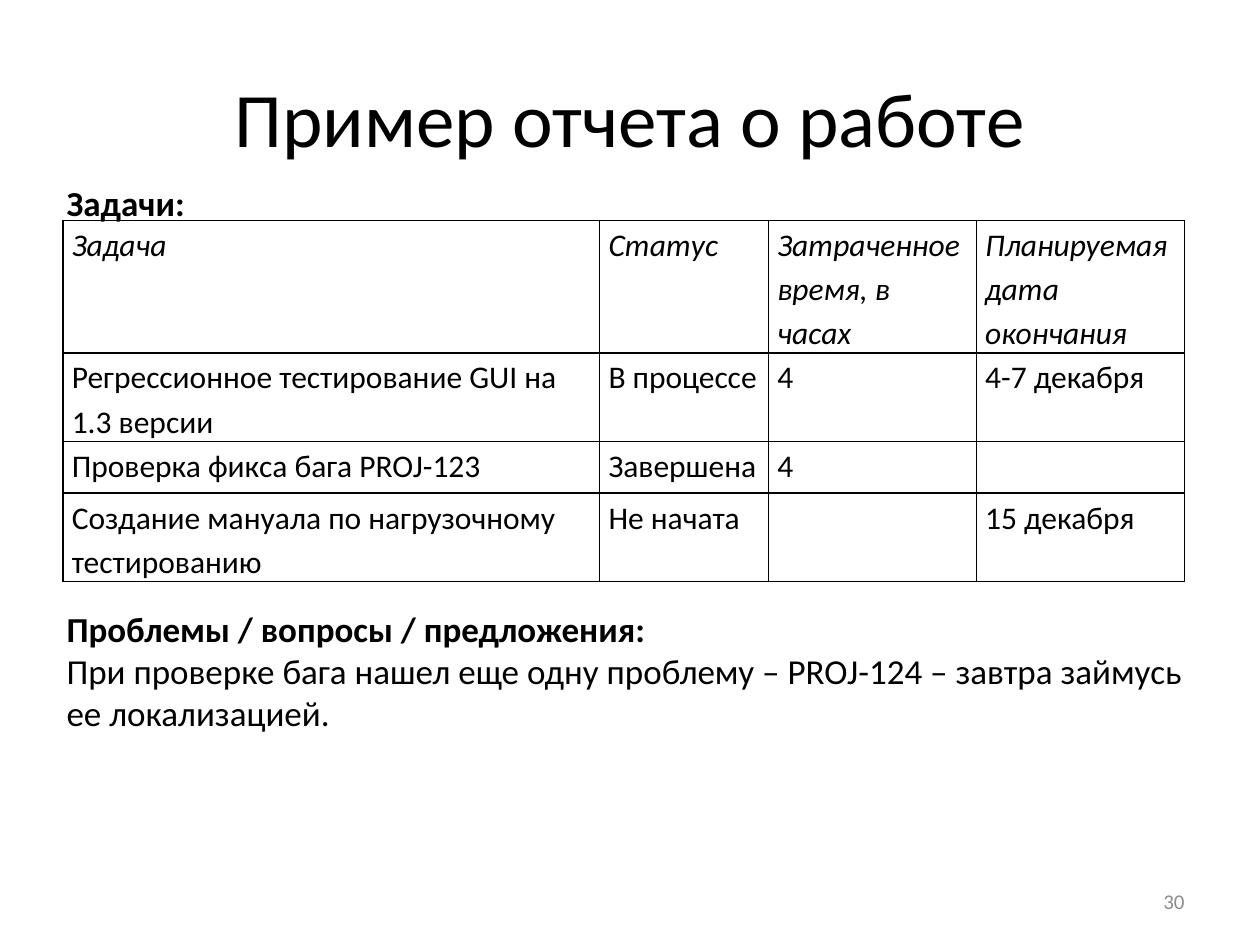
from lxml.etree import SubElement
from pptx import Presentation
from pptx.dml.color import RGBColor
from pptx.enum.text import MSO_ANCHOR, MSO_AUTO_SIZE, PP_ALIGN
from pptx.oxml.ns import qn
from pptx.util import Inches, Pt

COLUMN_WIDTHS = [4.26, 1.34, 1.65, 1.65]
ROW_HEIGHT = 0.41
TASKS = [
    ["Задача", "Статус", "Затраченное время, в часах", "Планируемая дата окончания"],
    ["Регрессионное тестирование GUI на 1.3 версии", "В процессе", "4", "4-7 декабря"],
    ["Проверка фикса бага PROJ-123", "Завершена", "4", ""],
    ["Создание мануала по нагрузочному тестированию", "Не начата", "", "15 декабря"],
]


def rgb(color):
    return RGBColor.from_string(color)


def add_borders(cell, color, width):
    properties = cell._tc.get_or_add_tcPr()
    for index, side in enumerate(("a:lnL", "a:lnR", "a:lnT", "a:lnB")):
        line = properties.makeelement(qn(side), {"w": str(Pt(width))})
        fill = SubElement(line, qn("a:solidFill"))
        SubElement(fill, qn("a:srgbClr"), val=color)
        properties.insert(index, line)


class ReportSlide:
    font_name = "Calibri"
    text_color = "000000"
    muted_color = "8C8C8C"

    def __init__(self, presentation):
        self.slide = presentation.slides.add_slide(presentation.slide_layouts[5])

    def format_runs(self, paragraph, size, color=None, bold=False, italic=False):
        for run in paragraph.runs:
            font = run.font
            font.name = self.font_name
            font.size = Pt(size)
            font.bold = bold
            font.italic = italic
            font.color.rgb = rgb(color or self.text_color)

    def title(self, text, left, top, width, height):
        title = self.slide.shapes.title
        title.left, title.top = Inches(left), Inches(top)
        title.width, title.height = Inches(width), Inches(height)
        text_frame = title.text_frame
        text_frame.text = text
        text_frame.vertical_anchor = MSO_ANCHOR.MIDDLE
        paragraph = text_frame.paragraphs[0]
        paragraph.alignment = PP_ALIGN.CENTER
        self.format_runs(paragraph, 44)

    def table(self, rows, left, top, column_widths, row_height):
        frame = self.slide.shapes.add_table(
            len(rows), len(column_widths), Inches(left), Inches(top),
            Inches(sum(column_widths)), Inches(row_height * len(rows)))
        table = frame.table
        table.horz_banding = False
        for column, width in zip(table.columns, column_widths):
            column.width = Inches(width)
        for row_index, (row, texts) in enumerate(zip(table.rows, rows)):
            row.height = Inches(row_height)
            for cell, text in zip(row.cells, texts):
                self.cell(cell, text, italic=row_index == 0)

    def cell(self, cell, text, italic):
        cell.fill.background()
        add_borders(cell, self.text_color, 1)
        cell.margin_left = cell.margin_right = Inches(0.07)
        cell.margin_top = cell.margin_bottom = 0
        cell.text_frame.text = text
        paragraph = cell.text_frame.paragraphs[0]
        paragraph.line_spacing = 1.15
        self.format_runs(paragraph, 18, italic=italic)

    def text_box(self, text, left, top, width, height):
        box = self.slide.shapes.add_textbox(
            Inches(left), Inches(top), Inches(width), Inches(height))
        text_frame = box.text_frame
        text_frame.word_wrap = True
        text_frame.text = text
        return text_frame

    def section(self, heading, body, left, top, width, height):
        """Bold heading, followed by a plain paragraph when there is a body."""
        text = f"{heading}\n{body}" if body else heading
        text_frame = self.text_box(text, left, top, width, height)
        text_frame.auto_size = MSO_AUTO_SIZE.SHAPE_TO_FIT_TEXT
        for index, paragraph in enumerate(text_frame.paragraphs):
            self.format_runs(paragraph, 20, bold=index == 0)

    def page_number(self, number, left, top, width, height):
        text_frame = self.text_box(number, left, top, width, height)
        text_frame.vertical_anchor = MSO_ANCHOR.MIDDLE
        paragraph = text_frame.paragraphs[0]
        paragraph.alignment = PP_ALIGN.RIGHT
        self.format_runs(paragraph, 12, self.muted_color)


def main():
    presentation = Presentation()
    presentation.slide_width = Inches(10)
    presentation.slide_height = Inches(7.5)
    report = ReportSlide(presentation)
    report.title("Пример отчета о работе", 0.5, 0.3, 9, 1.25)
    report.table(TASKS, 0.5, 1.75, COLUMN_WIDTHS, ROW_HEIGHT)
    report.page_number("30", 7.17, 6.95, 2.33, 0.4)
    report.section(
        "Проблемы / вопросы / предложения:",
        "При проверке бага нашел еще одну проблему – PROJ-124 – завтра займусь ее локализацией.",
        0.43, 4.77, 9.13, 1.11)
    report.section("Задачи:", "", 0.43, 1.39, 1.18, 0.44)
    presentation.save("out.pptx")


if __name__ == "__main__":
    main()
